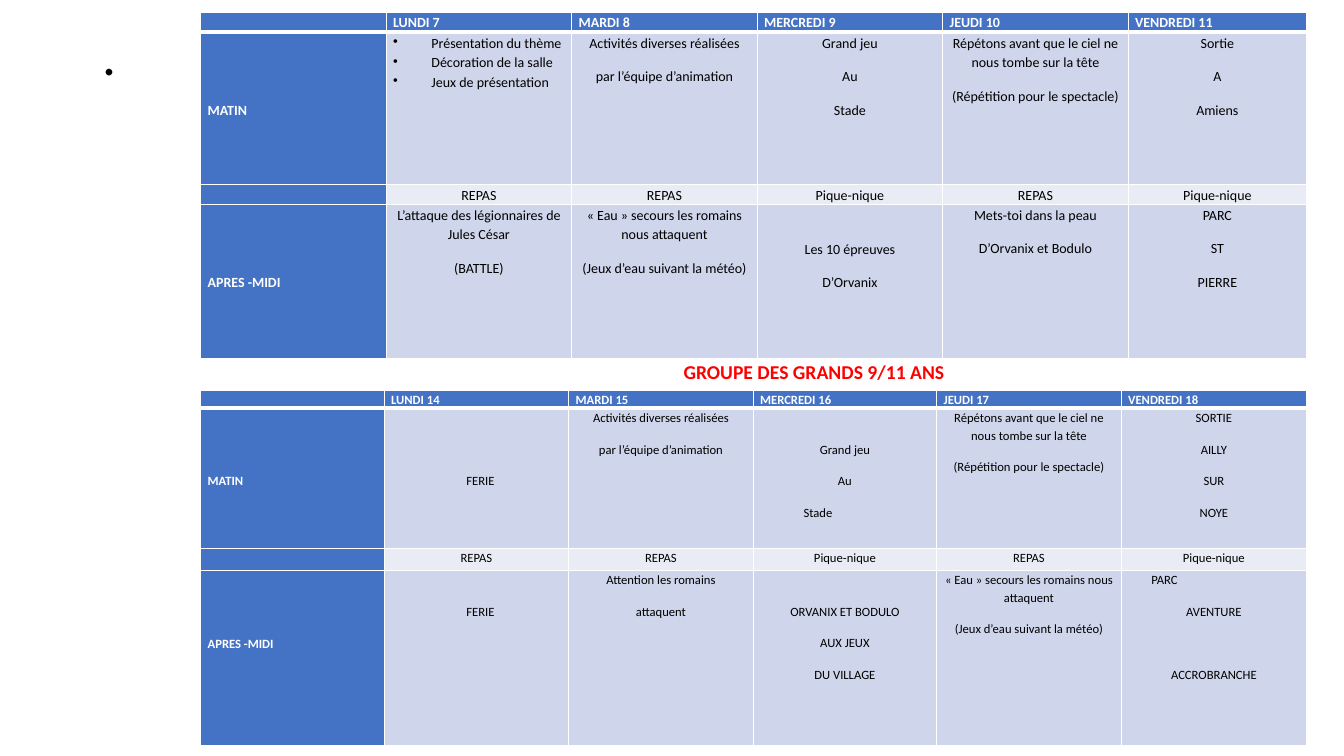
from dataclasses import dataclass, field

from lxml import etree
from pptx import Presentation
from pptx.dml.color import RGBColor
from pptx.enum import text
from pptx.oxml import ns
from pptx.util import Inches, Pt

BLUE, LILAC, PALE = "4472C4", "CFD5EA", "E9EBF5"
WHITE, BLACK, RED = "FFFFFF", "000000", "FF0000"
FONT = "Calibri"
LINE_SPACING, PARAGRAPH_GAP = 1.15, 10


@dataclass
class Activity:
    """Lines of one cell; skip is the number of lines left free above them."""
    lines: list = field(default_factory=list)
    skip: int = 0
    bulleted: bool = False
    indents: dict = field(default_factory=dict)  # line index -> (inches, centred)
    wide_gap_after: int = -1


def rgb(color):
    return RGBColor.from_string(color)


def set_font(paragraph, size, color, bold=False):
    font = paragraph.font
    font.name, font.size, font.bold = FONT, Pt(size), bold
    font.color.rgb = rgb(color)


def set_indent(paragraph, left, hanging=0.0, bullet=None):
    properties = paragraph._p.get_or_add_pPr()
    properties.set("marL", str(Inches(left)))
    properties.set("indent", str(Inches(-hanging)))
    if bullet:
        mark = etree.Element(ns.qn("a:buChar"), char=bullet)
        properties.find(ns.qn("a:defRPr")).addprevious(mark)


def set_borders(cell, top, bottom):
    properties = cell._tc.get_or_add_tcPr()
    for side, width in (("L", 1), ("R", 1), ("T", top), ("B", bottom)):
        line = etree.SubElement(properties, ns.qn(f"a:ln{side}"), w=str(Pt(width)))
        solid = etree.SubElement(line, ns.qn("a:solidFill"))
        etree.SubElement(solid, ns.qn("a:srgbClr"), val=WHITE)


def fill_cell(cell, activity, size, fill, color, bold, centred):
    cell.fill.solid()
    cell.fill.fore_color.rgb = rgb(fill)
    line_pitch = size * 1.22 * LINE_SPACING + PARAGRAPH_GAP
    cell.margin_left = cell.margin_right = Inches(0.07)
    cell.margin_top, cell.margin_bottom = Pt(activity.skip * line_pitch), 0

    lines = activity.lines or [""]
    for index, line in enumerate(lines):
        frame = cell.text_frame
        paragraph = frame.paragraphs[0] if index == 0 else frame.add_paragraph()
        paragraph.line_spacing = LINE_SPACING
        if line:
            paragraph.text = line
        else:
            paragraph._p.get_or_add_endParaRPr().set("sz", str(size * 100))
        tight = activity.bulleted and index < len(lines) - 1
        gap = 0 if tight else PARAGRAPH_GAP
        if index == activity.wide_gap_after:
            gap += line_pitch
        paragraph.space_after = Pt(gap)
        set_font(paragraph, size, color, bold)
        left, line_centred = activity.indents.get(index, (0, centred))
        if line_centred and not activity.bulleted:
            paragraph.alignment = text.PP_ALIGN.CENTER
        if activity.bulleted:
            set_indent(paragraph, 0.38, 0.38, "•")
        elif left:
            set_indent(paragraph, left)


def add_week(slide, left, top, widths, heights, size, days, mornings, afternoons):
    meals = [Activity([meal]) for meal in
             ("REPAS", "REPAS", "Pique-nique", "REPAS", "Pique-nique")]
    rows = [
        [Activity()] + [Activity([day]) for day in days],
        [Activity(["MATIN"], skip=2)] + mornings,
        [Activity()] + meals,
        [Activity(["APRES -MIDI"], skip=2)] + afternoons,
    ]
    frame = slide.shapes.add_table(
        len(rows), len(widths), Inches(left), Inches(top),
        Inches(sum(widths)), Inches(sum(heights)))
    week = frame.table
    week.first_row = week.horz_banding = False
    for column, width in zip(week.columns, widths):
        column.width = Inches(width)
    for row, height in zip(week.rows, heights):
        row.height = Inches(height)

    for r, activities in enumerate(rows):
        for c, activity in enumerate(activities):
            cell = week.cell(r, c)
            heading = r == 0 or c == 0
            fill = BLUE if heading else PALE if r == 2 else LILAC
            set_borders(cell, 3 if r == 1 else 1, 3 if r == 0 else 1)
            fill_cell(cell, activity, size, fill,
                      WHITE if heading else BLACK, heading, not heading)


def add_label(slide, box, wording, size, color, bold=False, centred=False, wrap=True):
    label = slide.shapes.add_textbox(*(Inches(length) for length in box))
    frame = label.text_frame
    frame.word_wrap = wrap
    frame.vertical_anchor = text.MSO_ANCHOR.MIDDLE
    paragraph = frame.paragraphs[0]
    paragraph.text = wording
    set_font(paragraph, size, color, bold)
    if centred:
        paragraph.alignment = text.PP_ALIGN.CENTER
    return paragraph


def main():
    deck = Presentation()
    deck.slide_width, deck.slide_height = Inches(13.33), Inches(7.5)
    slide = deck.slides.add_slide(deck.slide_layouts[6])

    # Title
    title = add_label(slide, (0.92, 0.4, 0.37, 0.34), ".", 39.6, BLACK)
    title.line_spacing = 0.9

    # Activities found in both weeks
    team = Activity(["Activités diverses réalisées", "par l’équipe d’animation"])
    rehearsal = Activity(["Répétons avant que le ciel ne nous tombe sur la tête",
                          "(Répétition pour le spectacle)"])
    water = Activity(["« Eau » secours les romains nous attaquent",
                      "(Jeux d’eau suivant la météo)"])

    # First week
    add_week(
        slide, 1.99, 0.12, [1.84] * 5 + [1.77], [0.2, 1.51, 0.2, 1.53], 10,
        ["LUNDI 7", "MARDI 8", "MERCREDI 9", "JEUDI 10", "VENDREDI 11"],
        [Activity(["Présentation du thème", "Décoration de la salle",
                   "Jeux de présentation"], bulleted=True),
         team,
         Activity(["Grand jeu", "Au", "Stade"]),
         rehearsal,
         Activity(["Sortie", "A", "Amiens"])],
        [Activity(["L’attaque des légionnaires de Jules César", "(BATTLE)"]),
         water,
         Activity(["Les 10 épreuves", "D’Orvanix"], skip=1),
         Activity(["Mets-toi dans la peau", "D’Orvanix et Bodulo"]),
         Activity(["PARC", "ST", "PIERRE"])])

    # Second week
    holiday = {0: (0.08, True)}
    add_week(
        slide, 1.99, 3.87, [1.82, 1.83, 1.83, 1.82, 1.83, 1.84],
        [0.18, 1.39, 0.22, 1.74], 9,
        ["LUNDI 14", "MARDI 15", "MERCREDI 16", "JEUDI 17", "VENDREDI 18"],
        [Activity(["FERIE"], skip=2, indents=holiday),
         team,
         Activity(["Grand jeu", "Au", "Stade"], skip=1, indents={2: (0.43, False)}),
         rehearsal,
         Activity(["SORTIE", "AILLY", "SUR", "NOYE"])],
        [Activity(["FERIE"], skip=1, indents=holiday),
         Activity(["Attention les romains", "attaquent"]),
         Activity(["ORVANIX ET BODULO", "AUX JEUX", "DU VILLAGE"], skip=1),
         water,
         Activity(["PARC", "AVENTURE", "ACCROBRANCHE"],
                  indents={0: (0.23, False)}, wide_gap_after=1)])

    # Group heading between the weeks
    add_label(slide, (1.41, 3.44, 13.33, 0.5), "GROUPE DES GRANDS 9/11 ANS",
              14, RED, bold=True, centred=True, wrap=False)

    deck.save("out.pptx")


if __name__ == "__main__":
    main()
